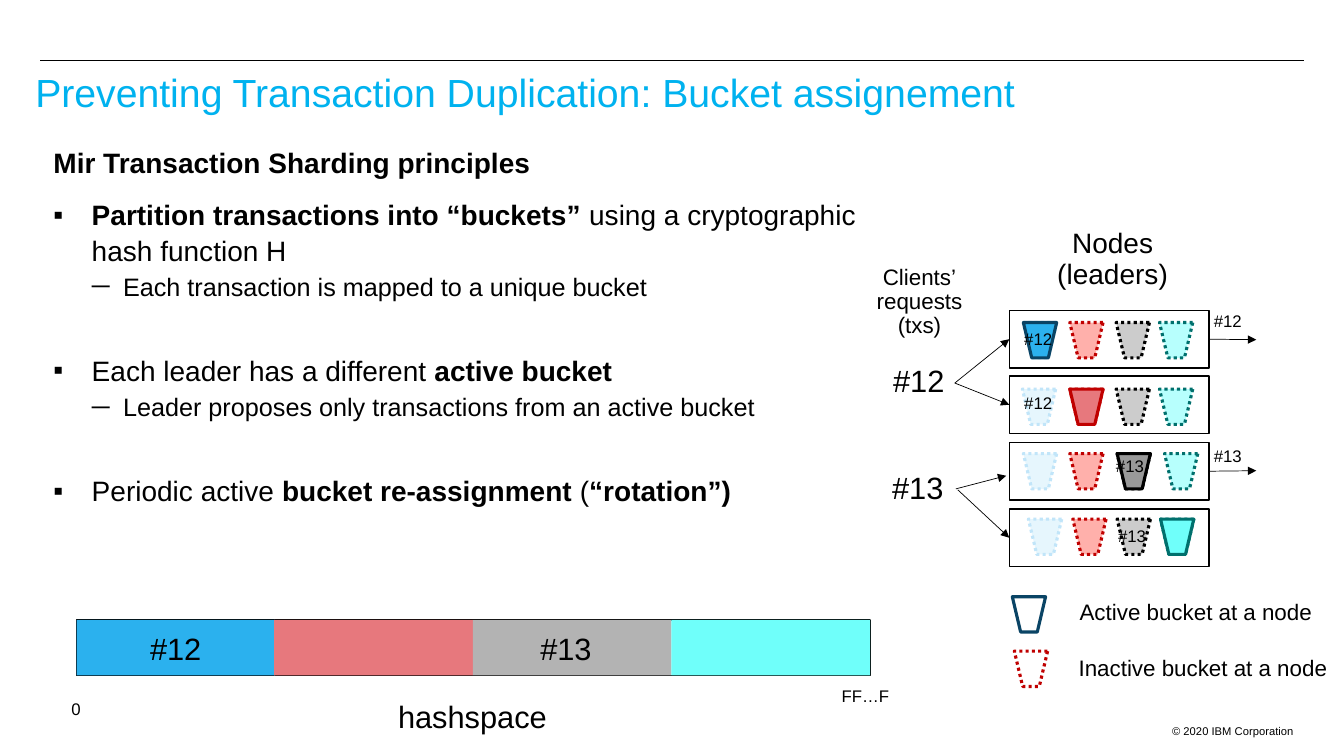
import pptx
import pptx.util
import pptx.dml.color
import pptx.enum.dml
import pptx.enum.shapes
import pptx.enum.text
import pptx.oxml
import pptx.oxml.ns
from dataclasses import dataclass
from lxml import etree

PX = 9144
SHAPE = pptx.enum.shapes.MSO_SHAPE
ALIGN = pptx.enum.text.PP_ALIGN
LEVELS = {0: ("▪", 38, -38), 1: ("─", 69, -31)}


@dataclass(frozen=True)
class Theme:
    """Colours and type sizes of the slide."""
    font: str = "Arial"
    ink: str = "000000"
    paper: str = "FFFFFF"
    title: str = "00B2EF"
    active_line: str = "0A4465"
    inactive_line: str = "C00000"
    hash_fills: tuple = ("2BB1EE", "E7787D", "B3B3B3", "6FFFFA")
    idle: tuple = (("E6F6FD", "C1E5F9"), ("FFB0AB", "C00000"),
                   ("CCCCCC", "000000"), ("B7FFFD", "00706D"))
    active: tuple = (("2CB1EE", "0A4465"), ("E7787D", "C00000"),
                     ("999999", "000000"), ("6FFFFA", "00706D"))
    title_size: int = 28
    body_size: int = 20
    sub_size: int = 18
    big: int = 22
    legend: int = 16
    small: int = 12
    tiny: int = 8


T = Theme()


def px(n):
    """Turn px into EMU."""
    return pptx.util.Emu(n * PX)


def rgb(color):
    """Turn a hex string into a colour."""
    return pptx.dml.color.RGBColor.from_string(color)


def style(font, size, color=T.ink, bold=None):
    """Format a font."""
    font.name, font.size, font.bold = T.font, pptx.util.Pt(size), bold
    font.color.rgb = rgb(color)


def set_insets(tf, x, y):
    """Set the inner margins of a text frame."""
    tf.margin_left = tf.margin_right = px(x)
    tf.margin_top = tf.margin_bottom = px(y)


def add_box(s, kind, x, y, w, h, fill=None, line=None, width=1.0):
    """Add a preset shape with an optional fill and line."""
    sp = s.shapes.add_shape(kind, px(x), px(y), px(w), px(h))
    sp.shadow.inherit = False
    if fill:
        sp.fill.solid()
        sp.fill.fore_color.rgb = rgb(fill)
    else:
        sp.fill.background()
    if line:
        sp.line.color.rgb = rgb(line)
        sp.line.width = pptx.util.Pt(width)
    else:
        sp.line.fill.background()
    return sp


def add_bucket(s, x, y, fill, line, dotted):
    """Add a bucket, dotted when it is inactive."""
    sp = add_box(s, SHAPE.TRAPEZOID, x, y, 33, 35, fill, line, 2.25)
    sp.rotation = 180
    if dotted:
        sp.line.dash_style = pptx.enum.dml.MSO_LINE.ROUND_DOT


def add_label(s, x, y, w, h, text, size, align=ALIGN.LEFT):
    """Add an unwrapped label, one paragraph per line."""
    tf = s.shapes.add_textbox(px(x), px(y), px(w), px(h)).text_frame
    tf.text = text
    tf.word_wrap = False
    tf.auto_size = pptx.enum.text.MSO_AUTO_SIZE.SHAPE_TO_FIT_TEXT
    set_insets(tf, 10, 5)
    for p in tf.paragraphs:
        p.alignment, p.line_spacing = align, 0.9
        for r in p.runs:
            style(r.font, size)


def add_line(s, x1, y1, x2, y2, width=0.5, arrow=True, start=None, end=None):
    """Add a straight line, joined to the given nodes."""
    kind = pptx.enum.shapes.MSO_CONNECTOR.STRAIGHT
    c = s.shapes.add_connector(kind, px(x1), px(y1), px(x2), px(y2))
    if start is not None:
        c.begin_connect(start, 3)
    if end is not None:
        c.end_connect(end, 1)
    c.line.color.rgb = rgb(T.ink)
    c.line.width = pptx.util.Pt(width)
    if arrow:
        tail = etree.SubElement(c.line._get_or_add_ln(), pptx.oxml.ns.qn("a:tailEnd"))
        tail.set("type", "triangle")
    etree.SubElement(c._element.spPr, pptx.oxml.ns.qn("a:effectLst"))


def set_bullet(p, level):
    """Give a paragraph the bullet and indent of its level."""
    char, left, hang = LEVELS[level]
    pPr = p._p.get_or_add_pPr()
    pPr.set("marL", str(px(left)))
    pPr.set("indent", str(px(hang)))
    color = etree.SubElement(pPr, pptx.oxml.ns.qn("a:buClr"))
    etree.SubElement(color, pptx.oxml.ns.qn("a:srgbClr")).set("val", T.ink)
    etree.SubElement(pPr, pptx.oxml.ns.qn("a:buFont")).set("typeface", T.font)
    etree.SubElement(pPr, pptx.oxml.ns.qn("a:buChar")).set("char", char)


def add_title(s):
    """Place and format the title with the rule above it."""
    add_line(s, 40, 60, 1293, 60, 0.75, arrow=False)
    sp = s.shapes.title
    sp.left, sp.top, sp.width, sp.height = px(27), px(65), px(1267), px(80)
    tf = sp.text_frame
    tf.text = "Preventing Transaction Duplication: Bucket assignement"
    tf.vertical_anchor = pptx.enum.text.MSO_ANCHOR.TOP
    set_insets(tf, 8, 8)
    p = tf.paragraphs[0]
    p.alignment, p.line_spacing = ALIGN.LEFT, 0.9
    style(p.runs[0].font, T.title_size, T.title)


def add_principles(s):
    """Add the list of sharding principles."""
    items = [
        (None, 0, [("Mir Transaction Sharding principles", True)]),
        (0, 10, [("Partition transactions into “buckets” ", True),
                 ("using a cryptographic hash function H", False)]),
        (1, 0, [("Each transaction is mapped to a unique bucket", False)]),
        (0, 34, [("Each leader has a different ", False), ("active bucket", True)]),
        (1, 0, [("Leader proposes only transactions from an active bucket", False)]),
        (0, 34, [("Periodic active ", False), ("bucket re-assignment ", True),
                 ("(", False), ("“rotation”)", True)]),
    ]
    tf = s.shapes.add_textbox(px(45), px(135), px(821), px(450)).text_frame
    tf.word_wrap = True
    set_insets(tf, 8, 8)
    for i, (level, before, runs) in enumerate(items):
        p = tf.add_paragraph() if i else tf.paragraphs[0]
        if level is not None:
            p.level = level
            set_bullet(p, level)
        p.line_spacing = 1.05
        p.space_before, p.space_after = pptx.util.Pt(before), pptx.util.Pt(2)
        for text, bold in runs:
            r = p.add_run()
            r.text = text
            style(r.font, T.sub_size if level == 1 else T.body_size, bold=bold)


def add_hashspace(s):
    """Add the hash space bar with its four segments."""
    add_box(s, SHAPE.RECTANGLE, 76, 615, 787, 55, T.paper, T.ink)
    for i, fill in enumerate(T.hash_fills):
        add_box(s, SHAPE.RECTANGLE, 76 + i * 787 // 4, 615, 197, 55, fill)
    add_label(s, 61, 690, 29, 28, "0", T.small)
    add_label(s, 825, 678, 68, 28, "FF…F", T.small)
    add_label(s, 139, 624, 72, 43, "#12", T.big)
    add_label(s, 526, 624, 72, 43, "#13", T.big)
    add_label(s, 385, 691, 170, 43, "hashspace", T.big)


def add_nodes(s):
    """Add the nodes, each with one active bucket, and return them."""
    rows = [(308, 320, (1015, 1061, 1107, 1150)),
            (373, 386, (1014, 1061, 1107, 1150)),
            (439, 450, (1015, 1061, 1108, 1155)),
            (505, 515, (1020, 1064, 1108, 1151))]
    nodes = []
    for i, (top, y, xs) in enumerate(rows):
        nodes.append(add_box(s, SHAPE.RECTANGLE, 1001, top, 198, 57, T.paper, T.ink))
        for x, (fill, line) in zip(xs, T.idle):
            add_bucket(s, x, y, fill, line, True)
        add_bucket(s, xs[i], y, *T.active[i], False)
    return nodes


def add_requests(s, nodes):
    """Add the client requests and their arrows."""
    add_label(s, 1038, 223, 131, 71, "Nodes\n(leaders)", T.body_size, ALIGN.CENTER)
    add_label(s, 859, 259, 106, 83, "Clients’\nrequests\n(txs)", T.legend, ALIGN.CENTER)
    add_label(s, 876, 358, 72, 43, "#12", T.big)
    add_label(s, 875, 464, 72, 43, "#13", T.big)
    add_line(s, 947, 380, 1001, 337, end=nodes[0])
    add_line(s, 947, 380, 1001, 402, end=nodes[1])
    add_line(s, 948, 485, 998, 472)
    add_line(s, 950, 486, 1001, 533, end=nodes[3])
    add_line(s, 1199, 337, 1246, 337, start=nodes[0])
    add_line(s, 1199, 467, 1246, 467, start=nodes[2])
    for x, y, text in [(1006, 323, "#12"), (1006, 387, "#12"), (1194, 306, "#12"),
                       (1097, 449, "#13"), (1099, 519, "#13"), (1194, 439, "#13")]:
        add_label(s, x, y, 48, 28, text, T.small)


def add_legend(s):
    """Add the legend of active and inactive buckets."""
    add_bucket(s, 1004, 592, None, T.active_line, False)
    add_bucket(s, 1006, 646, None, T.inactive_line, True)
    add_label(s, 1061, 592, 254, 34, "Active bucket at a node", T.legend)
    add_label(s, 1060, 647, 270, 34, "Inactive bucket at a node", T.legend)


def main():
    """Build and save the slide."""
    prs = pptx.Presentation()
    prs.slide_width, prs.slide_height = px(1333), px(750)
    s = prs.slides.add_slide(prs.slide_layouts[5])
    add_title(s)
    add_principles(s)
    add_hashspace(s)
    add_requests(s, add_nodes(s))
    add_legend(s)
    add_label(s, 1093, 715, 200, 20, "© 2020 IBM Corporation", T.tiny, ALIGN.RIGHT)
    prs.save("out.pptx")


if __name__ == "__main__":
    main()
